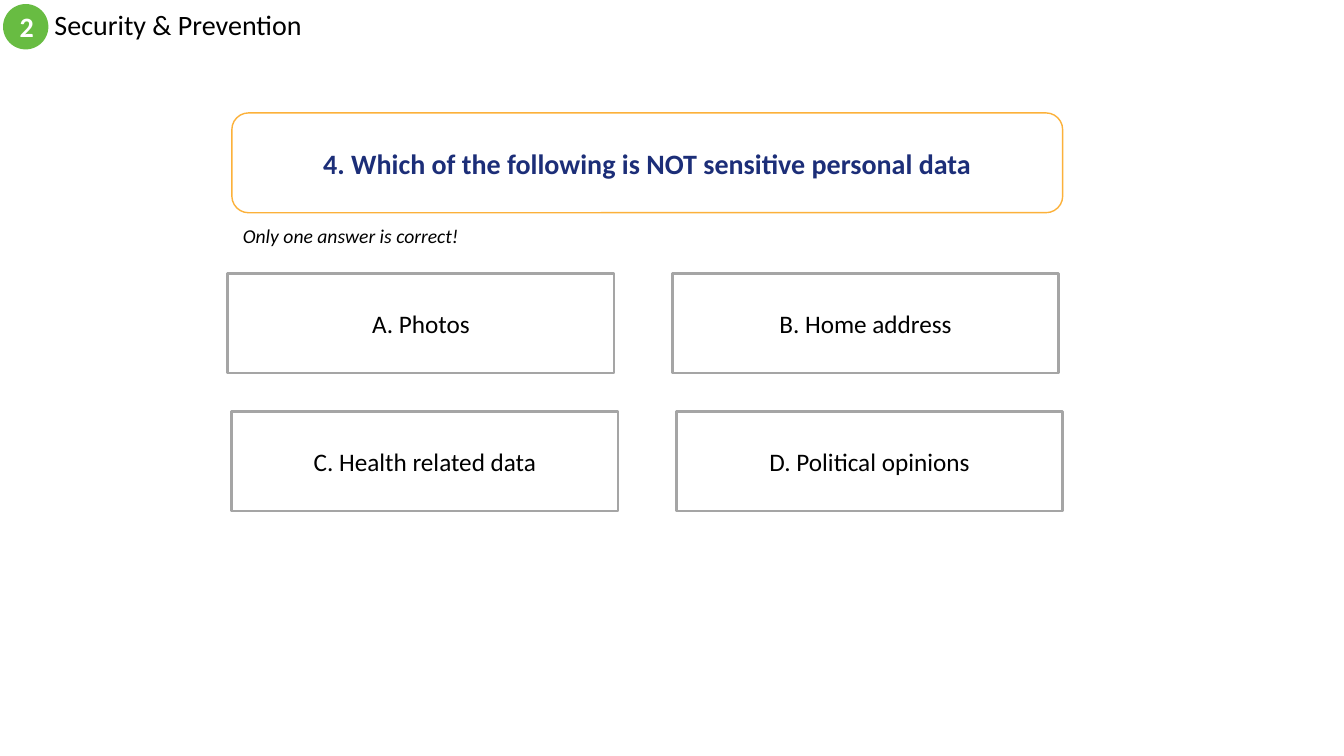
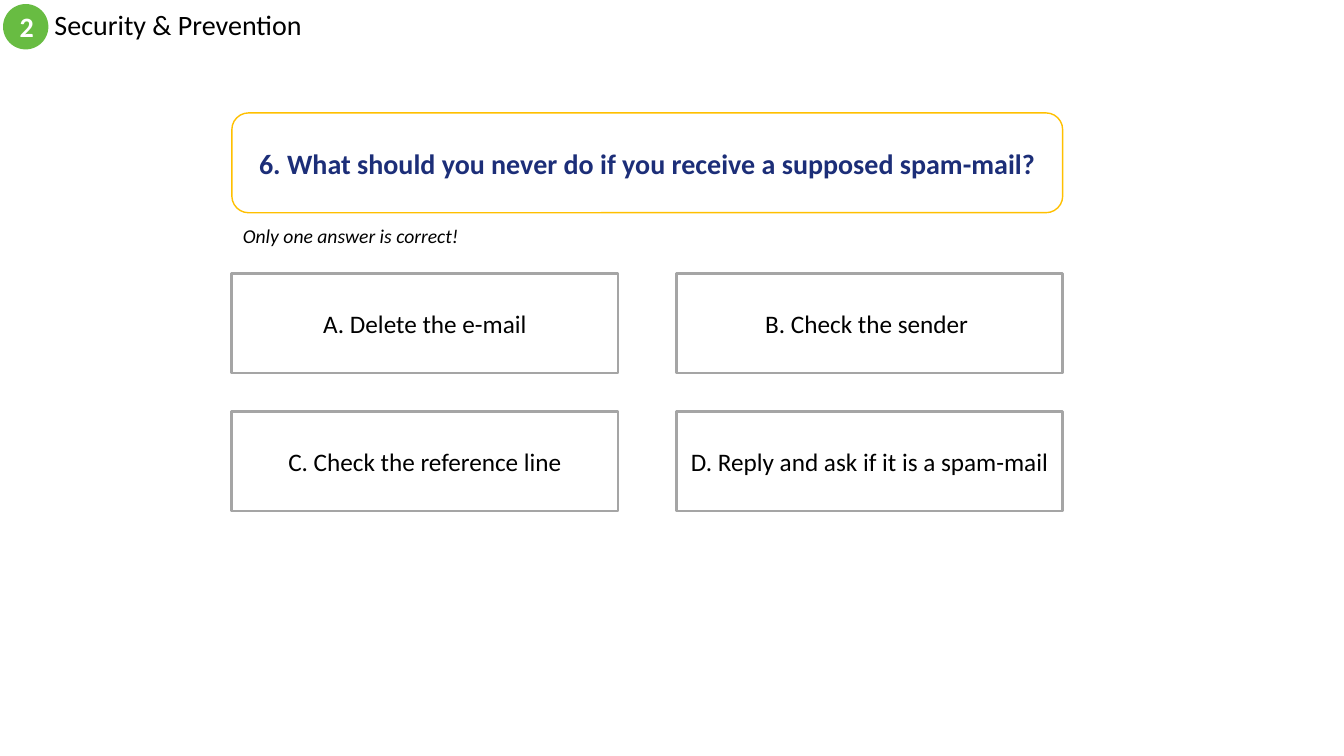
import dataclasses

import pptx
import pptx.dml.color
import pptx.enum.shapes
import pptx.enum.text
import pptx.util

SHAPE = pptx.enum.shapes.MSO_SHAPE
ALIGN = pptx.enum.text.PP_ALIGN
ANCHOR = pptx.enum.text.MSO_ANCHOR
AUTOSIZE = pptx.enum.text.MSO_AUTO_SIZE


@dataclasses.dataclass(frozen=True)
class Theme:
    font: str = "Calibri"
    black: str = "000000"
    white: str = "FFFFFF"
    navy: str = "1C2E78"
    green: str = "68BC42"
    grey: str = "A5A5A5"
    orange: str = "FCB13A"
    amber: str = "FFC000"
    heading: int = 20
    answer: int = 18
    hint: int = 14


@dataclasses.dataclass(frozen=True)
class Grid:
    columns: int = 1333
    rows: int = 750
    left: int = 230
    top: int = 271
    box_width: int = 383
    box_height: int = 99
    column_gap: int = 58
    row_gap: int = 38

    def cell(self, column, row, shift=0):
        x = self.left + column * (self.box_width + self.column_gap) + shift
        y = self.top + row * (self.box_height + self.row_gap)
        return x, y, self.box_width, self.box_height

    @property
    def full_width(self):
        return 2 * self.box_width + self.column_gap


class QuizDeck:
    def __init__(self, theme, grid):
        self.theme = theme
        self.grid = grid
        self.prs = pptx.Presentation()
        self.prs.slide_width = pptx.util.Inches(13.33)
        self.prs.slide_height = pptx.util.Inches(7.5)
        self.s = None

    def place(self, x, y, width, height):
        unit_x = self.prs.slide_width / self.grid.columns
        unit_y = self.prs.slide_height / self.grid.rows
        return [round(n * unit) for n, unit in
                ((x, unit_x), (y, unit_y), (width, unit_x), (height, unit_y))]

    def text(self, sp, words, size, color, align=ALIGN.CENTER,
             anchor=ANCHOR.MIDDLE, spacing=None, **style):
        tf = sp.text_frame
        frame = {"word_wrap": True, "auto_size": AUTOSIZE.NONE,
                 "vertical_anchor": anchor}
        for name, value in frame.items():
            setattr(tf, name, value)
        p = tf.paragraphs[0]
        p.alignment = align
        if spacing:
            p.line_spacing = spacing
        r = p.add_run()
        r.text = words
        font = {"name": self.theme.font, "size": pptx.util.Pt(size), **style}
        for name, value in font.items():
            setattr(r.font, name, value)
        r.font.color.rgb = pptx.dml.color.RGBColor.from_string(color)

    def shape(self, kind, box, fill, line=None, weight=1):
        sp = self.s.shapes.add_shape(kind, *self.place(*box))
        sp.shadow.inherit = False
        sp.fill.solid()
        sp.fill.fore_color.rgb = pptx.dml.color.RGBColor.from_string(fill)
        if line:
            sp.line.color.rgb = pptx.dml.color.RGBColor.from_string(line)
            sp.line.width = pptx.util.Pt(weight)
        else:
            sp.line.fill.background()
        return sp

    def new_slide(self, title, number):
        self.s = self.prs.slides.add_slide(self.prs.slide_layouts[5])
        sp = self.s.shapes.title
        sp.left, sp.top, sp.width, sp.height = self.place(44, 4, 800, 45)
        self.text(sp, title, self.theme.heading, self.theme.black,
                  align=ALIGN.LEFT, spacing=0.9)
        badge = self.shape(SHAPE.OVAL, (3, 4, 45, 45), self.theme.green)
        self.text(badge, number, self.theme.heading, self.theme.white, bold=True)

    def question(self, words, line):
        box = (self.grid.left, 112, self.grid.full_width, self.grid.box_height)
        sp = self.shape(SHAPE.ROUNDED_RECTANGLE, box, self.theme.white, line)
        self.text(sp, words, self.theme.heading, self.theme.navy, bold=True)

    def hint(self, words):
        sp = self.s.shapes.add_textbox(*self.place(231, 217, 236, 34))
        self.text(sp, words, self.theme.hint, self.theme.black,
                  align=ALIGN.LEFT, anchor=ANCHOR.TOP, italic=True)

    def answers(self, choices, row_shifts):
        for i, words in enumerate(choices):
            row, column = divmod(i, 2)
            box = self.grid.cell(column, row, row_shifts[row])
            sp = self.shape(SHAPE.RECTANGLE, box, self.theme.white,
                            self.theme.grey, 2)
            self.text(sp, words, self.theme.answer, self.theme.black)


def main():
    theme = Theme()
    deck = QuizDeck(theme, Grid())
    quiz = [
        ("4. Which of the following is NOT sensitive personal data", theme.orange,
         ["A. Photos", "B. Home address", "C. Health related data",
          "D. Political opinions"], (-4, 0)),
        ("6. What should you never do if you receive a supposed spam-mail?",
         theme.amber,
         ["A. Delete the e-mail", "B. Check the sender ",
          "C. Check the reference line", "D. Reply and ask if it is a spam-mail"],
         (0, 0)),
    ]
    for question, line, choices, row_shifts in quiz:
        deck.new_slide("Security & Prevention", "2")
        deck.question(question, line)
        deck.hint("Only one answer is correct!")
        deck.answers(choices, row_shifts)
    deck.prs.save("out.pptx")


if __name__ == "__main__":
    main()
